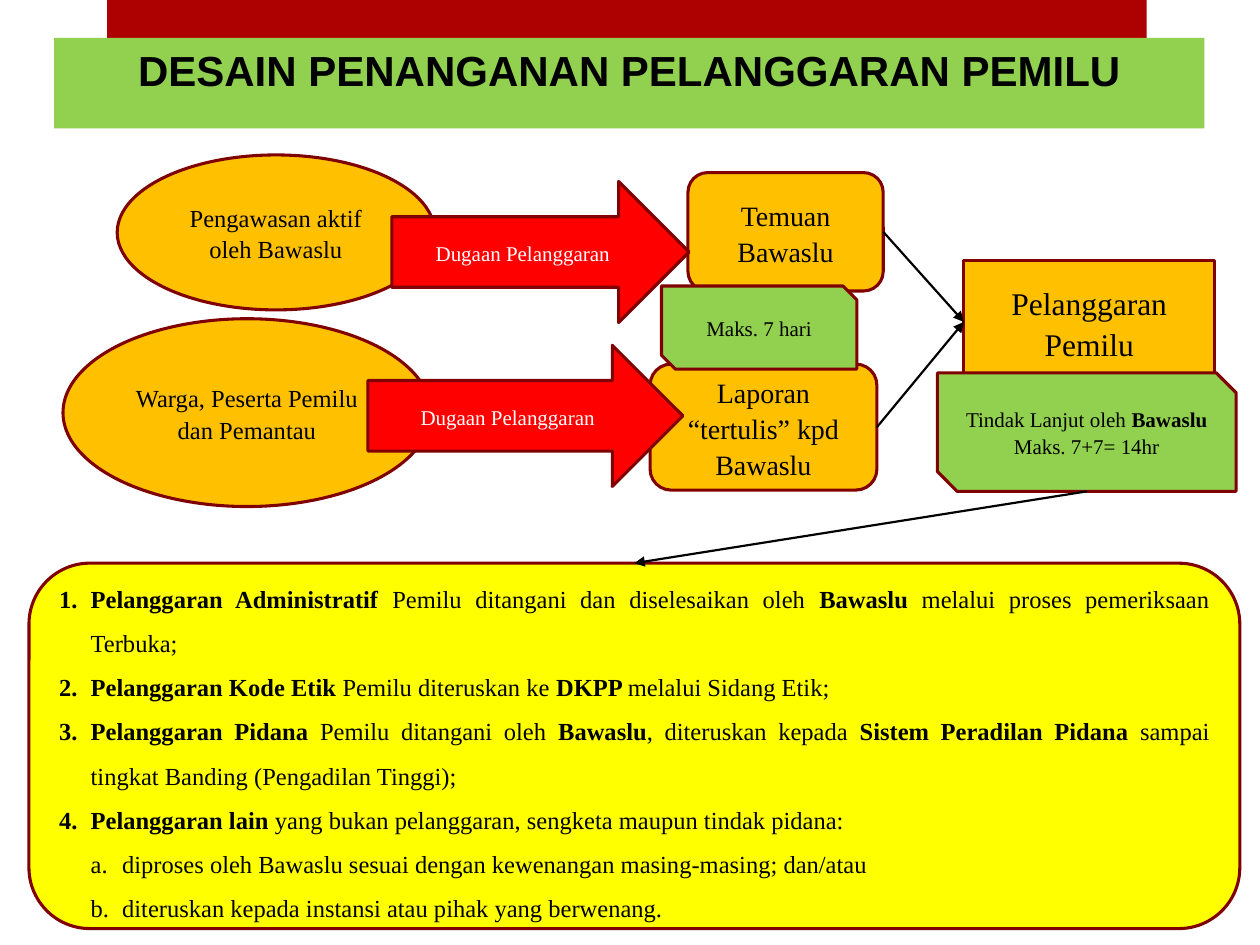
"""Build the slide on how election violations are handled."""
from dataclasses import dataclass

from lxml.etree import SubElement
from pptx import Presentation
from pptx.dml.color import RGBColor as Rgb
from pptx.enum.shapes import MSO_CONNECTOR as Link, MSO_SHAPE as Form
from pptx.enum.text import MSO_ANCHOR as Anchor, PP_ALIGN as Align
from pptx.oxml.ns import qn
from pptx.util import Inches, Pt


@dataclass(frozen=True)
class Theme:
    black: str = "000000"
    white: str = "FFFFFF"
    banner: str = "AD0101"
    edge: str = "800101"
    green: str = "92D050"
    gold: str = "FFC000"
    red: str = "FF0000"
    yellow: str = "FFFF00"
    serif: str = "Times New Roman"
    sans: str = "Arial"
    title: int = 24
    head: int = 18
    node: int = 16
    body: int = 14
    note: int = 12
    border: float = 1.75
    arrow: float = 1.25


@dataclass(frozen=True)
class Box:
    name: str
    form: Form
    left: float
    top: float
    width: float
    height: float
    fill: str
    size: int
    text: str
    ink: str = Theme.black


@dataclass(frozen=True)
class Item:
    text: str
    level: int = 0


T = Theme()

BOXES = [
    Box("finding", Form.ROUNDED_RECTANGLE, 5.46, 1.37, 1.55, 0.94, T.gold, T.node, "Temuan Bawaslu"),
    Box("report", Form.ROUNDED_RECTANGLE, 5.16, 2.89, 1.8, 1, T.gold, T.node,
        "Laporan “tertulis” kpd Bawaslu"),
    Box("breach", Form.RECTANGLE, 7.65, 2.07, 1.99, 0.97, T.gold, T.head, "Pelanggaran Pemilu"),
    Box("watch", Form.OVAL, 0.93, 1.23, 2.52, 1.23, T.gold, T.body, "Pengawasan aktif oleh Bawaslu"),
    Box("public", Form.OVAL, 0.5, 2.53, 2.92, 1.49, T.gold, T.body,
        "Warga, Peserta Pemilu dan Pemantau"),
    Box("upper", Form.RIGHT_ARROW, 3.11, 1.44, 2.36, 1.12, T.red, T.note, "Dugaan Pelanggaran", T.white),
    Box("lower", Form.RIGHT_ARROW, 2.92, 2.74, 2.5, 1.12, T.red, T.note, "Dugaan Pelanggaran", T.white),
    Box("limit", Form.SNIP_2_DIAG_RECTANGLE, 5.25, 2.27, 1.55, 0.66, T.green, T.note, "Maks. 7 hari"),
    Box("follow", Form.SNIP_2_DIAG_RECTANGLE, 7.44, 2.96, 2.37, 0.94, T.green, T.note,
        "Tindak Lanjut oleh **Bawaslu **Maks. 7+7= 14hr"),
]

BANNER = Box("banner", Form.RECTANGLE, 0.85, 0, 8.25, 0.42, T.banner, T.note, "")
TITLE = Box("title", Form.RECTANGLE, 0.43, 0.3, 9.13, 0.72, T.green, T.title,
            "**DESAIN PENANGANAN PELANGGARAN PEMILU**")
PANEL = Box("panel", Form.ROUNDED_RECTANGLE, 0.23, 4.47, 9.61, 2.9, T.yellow, T.body, "")

ITEMS = [
    Item("**Pelanggaran Administratif **Pemilu ditangani dan diselesaikan oleh **Bawaslu **"
         "melalui proses pemeriksaan Terbuka;"),
    Item("**Pelanggaran Kode Etik **Pemilu diteruskan ke **DKPP **melalui Sidang Etik;"),
    Item("**Pelanggaran Pidana **Pemilu ditangani oleh **Bawaslu**, diteruskan kepada "
         "**Sistem Peradilan Pidana **sampai tingkat Banding (Pengadilan Tinggi);"),
    Item("**Pelanggaran lain **yang bukan pelanggaran, sengketa maupun tindak pidana:"),
    Item("diproses oleh Bawaslu sesuai dengan kewenangan masing-masing; dan/atau", 1),
    Item("diteruskan kepada instansi atau pihak yang berwenang.", 1),
]


def write(para, text: str, size: int, ink: str, face: str = T.serif) -> None:
    """Write text in a paragraph, with bold between double stars."""
    for turn, part in enumerate(text.split("**")):
        if part:
            run = para.add_run()
            run.text = part
            font = run.font
            font.name, font.size, font.bold = face, Pt(size), turn % 2 == 1
            font.color.rgb = Rgb.from_string(ink)


def draw(slide, box: Box, edge: bool = True):
    """Draw a filled shape, with a border if asked."""
    shape = slide.shapes.add_shape(
        box.form, Inches(box.left), Inches(box.top), Inches(box.width), Inches(box.height))
    shape.shadow.inherit = False
    shape.fill.solid()
    shape.fill.fore_color.rgb = Rgb.from_string(box.fill)
    if edge:
        shape.line.color.rgb = Rgb.from_string(T.edge)
        shape.line.width = Pt(T.border)
    else:
        shape.line.fill.background()
    shape.text_frame.word_wrap = True
    shape.text_frame.vertical_anchor = Anchor.MIDDLE
    return shape


def label(shape, box: Box) -> None:
    """Center the text of a box in its shape."""
    para = shape.text_frame.paragraphs[0]
    para.alignment = Align.CENTER
    para.line_spacing, para.space_after = 1.07, Pt(8)
    write(para, box.text, box.size, box.ink)


def fill_list(shape, items: list[Item]) -> None:
    """Write the numbered items in a shape."""
    frame = shape.text_frame
    for place, item in enumerate(items):
        para = frame.add_paragraph() if place else frame.paragraphs[0]
        para.alignment, para.level, para.line_spacing = Align.JUSTIFY, item.level, 1.5
        props = para._p.get_or_add_pPr()
        props.set("marL", str(Inches(0.25 * (item.level + 1))))
        props.set("indent", str(Inches(-0.25)))
        style = "alphaLcPeriod" if item.level else "arabicPeriod"
        SubElement(props, qn("a:buFont"), typeface="+mj-lt")
        SubElement(props, qn("a:buAutoNum"), type=style)
        write(para, item.text, T.body, T.black)


def link(slide, start, end, side: int):
    """Draw an arrow from the bottom or right of a shape to a side of another."""
    wire = slide.shapes.add_connector(
        Link.STRAIGHT, start.left + start.width // 2, start.top + start.height, end.left, end.top)
    wire.end_connect(end, side)
    wire.line.color.rgb = Rgb.from_string(T.black)
    wire.line.width = Pt(T.arrow)
    SubElement(wire.line._get_or_add_ln(), qn("a:tailEnd"), type="triangle")
    SubElement(wire._element.spPr, qn("a:effectLst"))
    return wire


def main() -> None:
    """Build and save the slide."""
    deck = Presentation()
    deck.slide_width, deck.slide_height = Inches(10), Inches(7.5)
    slide = deck.slides.add_slide(deck.slide_layouts[6])
    draw(slide, BANNER, edge=False)
    title = draw(slide, TITLE, edge=False)
    title.text_frame.vertical_anchor = Anchor.TOP
    head = title.text_frame.paragraphs[0]
    head.alignment = Align.CENTER
    write(head, TITLE.text, TITLE.size, TITLE.ink, T.sans)

    nodes = {}
    for box in BOXES:
        nodes[box.name] = draw(slide, box)
        label(nodes[box.name], box)
    panel = draw(slide, PANEL)
    fill_list(panel, ITEMS)

    for name in ("finding", "report"):
        link(slide, nodes[name], nodes["breach"], 1).begin_connect(nodes[name], 3)
    link(slide, nodes["follow"], panel, 0)
    deck.save("out.pptx")


if __name__ == "__main__":
    main()
